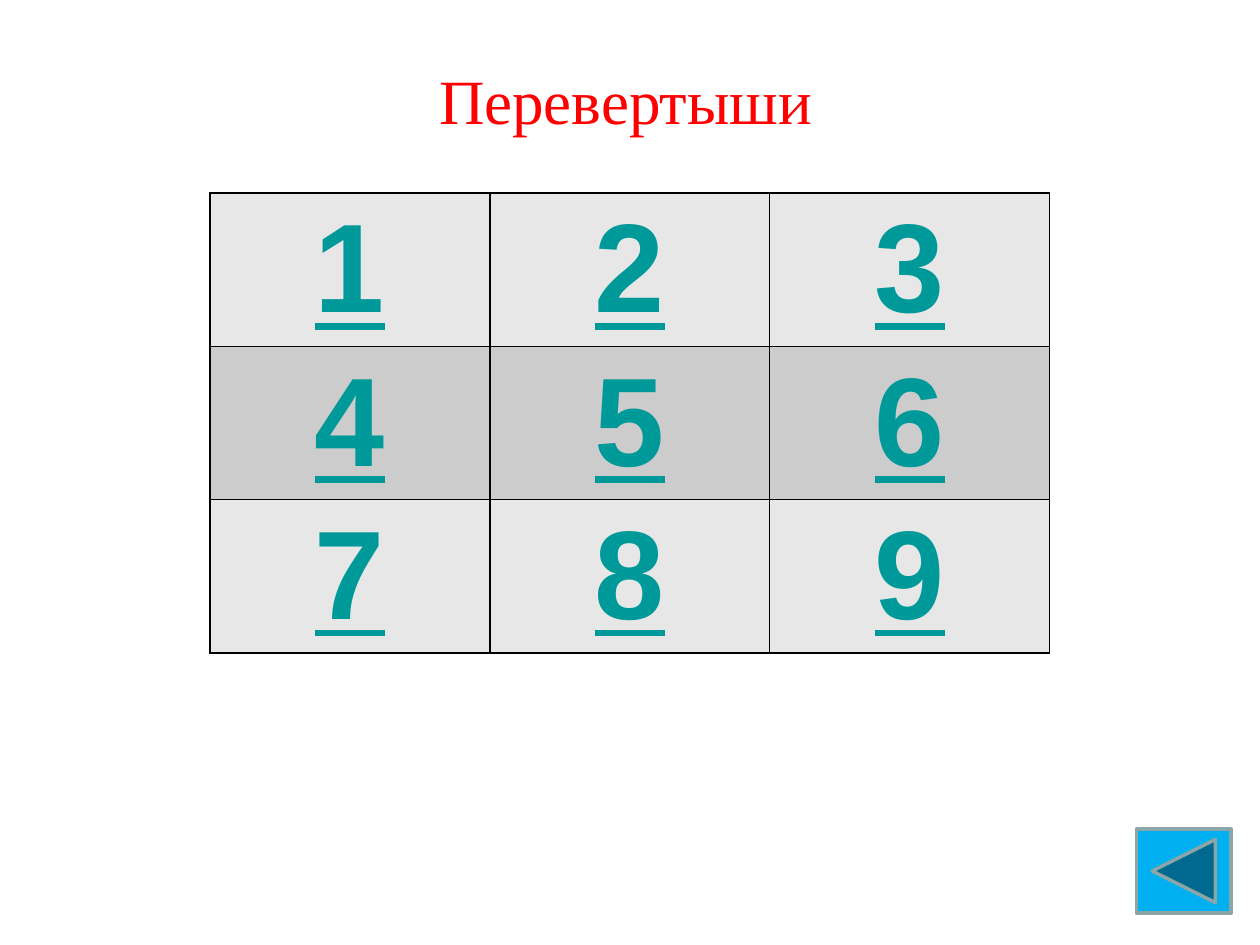
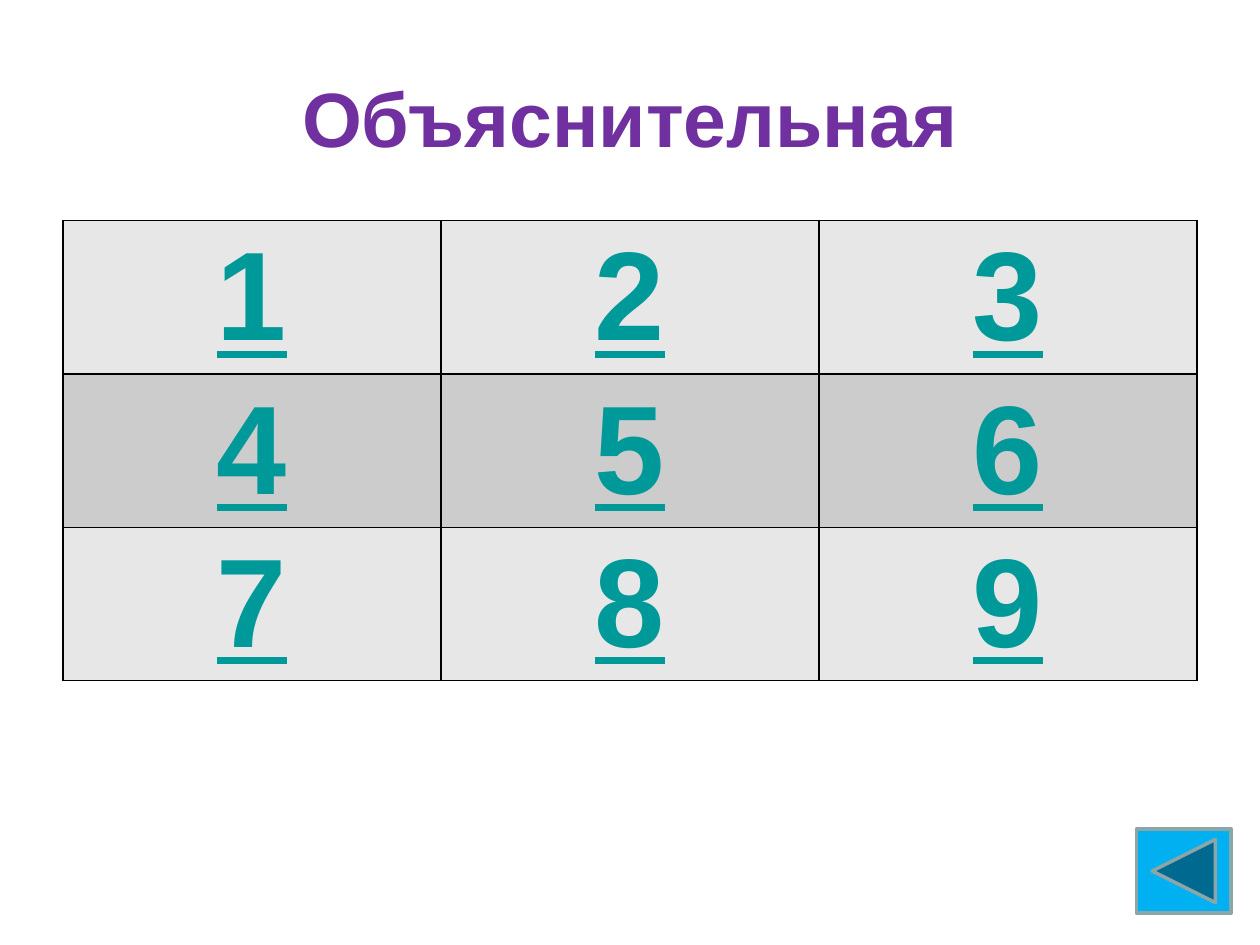
from lxml.etree import SubElement
from pptx import Presentation
from pptx.dml.color import RGBColor
from pptx.enum.shapes import MSO_SHAPE as Preset
from pptx.enum.text import MSO_ANCHOR as Anchor, MSO_AUTO_SIZE as AutoSize, PP_ALIGN as Align
from pptx.oxml.ns import qn
from pptx.util import Cm, Pt

COLORS = {
    "red title": "FF0000",
    "purple title": "7030A0",
    "number": "009999",
    "light row": "E7E7E7",
    "dark row": "CCCCCC",
    "border": "000000",
    "button": "00B0F0",
    "button line": "8AA6A8",
}
TITLE_ONLY = 5
GRID_SIZE = 3
ROW_HEIGHT = 3.09
BUTTON_BOX = (22.91, 16.71, 1.91, 1.7)


def color(name):
    return RGBColor.from_string(COLORS[name])


def format_text(para, font_name, size, color_name, bold=False, underline=False):
    para.alignment = Align.CENTER
    for span in para.runs:
        font = span.font
        font.name, font.size = font_name, Pt(size)
        font.bold, font.underline = bold, underline
        font.color.rgb = color(color_name)


def add_title(page, text, box, font_name, size, color_name, bold, anchor):
    title = page.shapes.title
    title.left, title.top, title.width, title.height = map(Cm, box)
    frame = title.text_frame
    frame.text = text
    frame.word_wrap = True
    frame.auto_size = AutoSize.NONE
    frame.vertical_anchor = anchor
    format_text(frame.paragraphs[0], font_name, size, color_name, bold)


def add_borders(cell):
    properties = cell._tc.get_or_add_tcPr()
    for side in ("a:lnL", "a:lnR", "a:lnT", "a:lnB"):
        line = SubElement(properties, qn(side), w=str(Pt(1)))
        fill = SubElement(line, qn("a:solidFill"))
        SubElement(fill, qn("a:srgbClr"), val=COLORS["border"])


def add_number_grid(page, left, top, width):
    """Number the questions row by row in a square table."""
    table = page.shapes.add_table(
        GRID_SIZE, GRID_SIZE, Cm(left), Cm(top), Cm(width), Cm(ROW_HEIGHT * GRID_SIZE)
    ).table
    table.first_row = False
    for index, cell in enumerate(table.iter_cells()):
        row = index // GRID_SIZE
        add_borders(cell)
        cell.fill.solid()
        cell.fill.fore_color.rgb = color("dark row" if row % 2 else "light row")
        cell.margin_top, cell.margin_bottom = Cm(0.12), Cm(0.05)
        para = cell.text_frame.paragraphs[0]
        para.text = str(index + 1)
        format_text(para, "Arial", 72, "number", bold=True, underline=True)


def add_back_button(page):
    button = page.shapes.add_shape(Preset.ACTION_BUTTON_BACK_OR_PREVIOUS, *map(Cm, BUTTON_BOX))
    button.shadow.inherit = False
    button.fill.solid()
    button.fill.fore_color.rgb = color("button")
    button.line.color.rgb = color("button line")
    button.line.width = Pt(2)


def add_question_page(deck, title, grid):
    page = deck.slides.add_slide(deck.slide_layouts[TITLE_ONLY])
    add_title(page, *title)
    add_number_grid(page, *grid)
    add_back_button(page)


def main():
    deck = Presentation()
    deck.slide_width, deck.slide_height = Cm(25.4), Cm(19.05)

    # Word reversals
    add_question_page(
        deck,
        title=("Перевертыши", (2.31, 1.12, 20.6, 1.8), "Times New Roman", 36,
               "red title", False, Anchor.TOP),
        grid=(4.23, 3.89, 16.93),
    )

    # Explanations
    add_question_page(
        deck,
        title=("Объяснительная", (1.27, 0.76, 22.86, 3.18), "Arial", 44,
               "purple title", True, Anchor.MIDDLE),
        grid=(1.27, 4.45, 22.86),
    )
    deck.save("out.pptx")


if __name__ == "__main__":
    main()
